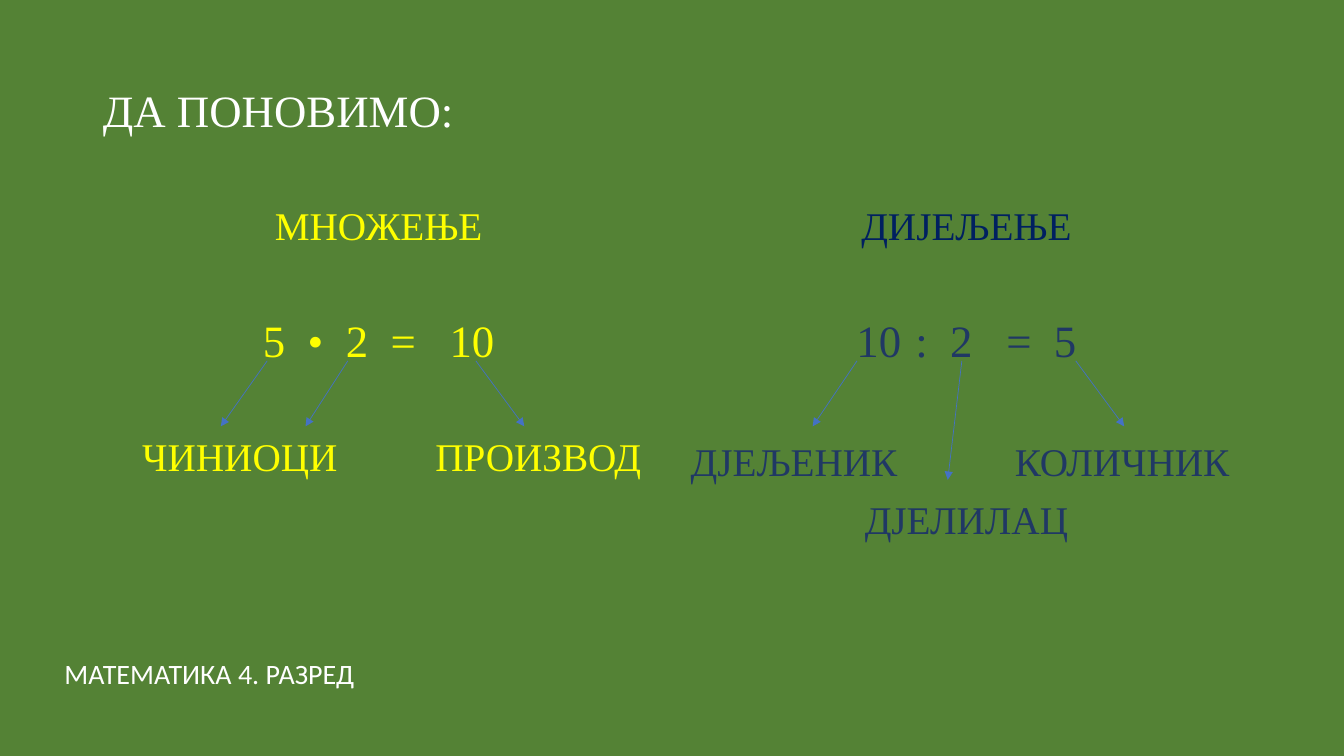
"""Build the revision slide on multiplication and division."""
from dataclasses import dataclass

from pptx import Presentation
from pptx import util as u
from pptx.dml import color
from pptx.enum import shapes, text
from pptx.oxml import ns
from lxml import etree


@dataclass(frozen=True)
class Theme:
    """Colours, fonts and type sizes of the slide."""
    board: str = "548235"
    white: str = "FFFFFF"
    yellow: str = "FFFF00"
    navy: str = "002060"
    ink: str = "203864"
    arrow: str = "4472C4"
    serif: str = "Times New Roman"
    sans: str = "Calibri"
    large: int = 32
    medium: int = 28
    small: int = 20


THEME = Theme()
LEFT, CENTER = text.PP_ALIGN.LEFT, text.PP_ALIGN.CENTER


def rgb(value):
    """Turn a hex string into a colour."""
    return color.RGBColor.from_string(value)


def place(shape, box):
    """Move a shape to a box given in inches."""
    shape.left, shape.top, shape.width, shape.height = map(u.Inches, box)


def write(paragraph, words, *, size, ink, font=THEME.serif, align=LEFT,
          before=0, spacing=0.9, indent=0, gaps=()):
    """Fill a paragraph with unbulleted text, widening its spaces by gaps in points."""
    properties = paragraph._p.get_or_add_pPr()
    properties.set("marL", str(u.Inches(indent)))
    properties.set("indent", "0")
    etree.SubElement(properties, ns.qn("a:buNone"))
    paragraph.alignment = align
    paragraph.line_spacing = spacing
    paragraph.space_before = u.Pt(before)
    parts = words.split(" ") if gaps else [words]
    pieces = [(parts[0], 0)]
    for gap, part in zip(gaps, parts[1:]):
        pieces += [(" ", gap), (part, 0)]
    for piece, gap in pieces:
        run = paragraph.add_run()
        run.text = piece
        run.font.name = font
        run.font.size = u.Pt(size)
        run.font.color.rgb = rgb(ink)
        if gap:
            run.font._element.set("spc", str(gap * 100))


def add_title(slide, box):
    """Place the slide title."""
    title = slide.shapes.title
    place(title, box)
    frame = title.text_frame
    frame.vertical_anchor = text.MSO_ANCHOR.MIDDLE
    frame.auto_size = text.MSO_AUTO_SIZE.NONE
    write(frame.paragraphs[0], "ДА ПОНОВИМО:", size=THEME.large, ink=THEME.white)


def add_arrow(slide, start, end):
    """Draw a thin arrow between two points in inches."""
    arrow = slide.shapes.add_connector(
        shapes.MSO_CONNECTOR.STRAIGHT, *map(u.Inches, (*start, *end)))
    arrow.line.color.rgb = rgb(THEME.arrow)
    arrow.line.width = u.Pt(0.5)
    etree.SubElement(arrow.line._get_or_add_ln(), ns.qn("a:tailEnd"), type="triangle")
    etree.SubElement(arrow._element.spPr, ns.qn("a:effectLst"))


def add_operation(slide, body, box, lines, arrows):
    """Fill one column with an operation and arrows to the names of its parts."""
    place(body, box)
    frame = body.text_frame
    frame.word_wrap = True
    frame.vertical_anchor = text.MSO_ANCHOR.TOP
    frame.auto_size = text.MSO_AUTO_SIZE.NONE
    for number, (words, look) in enumerate(lines):
        paragraph = frame.add_paragraph() if number else frame.paragraphs[0]
        write(paragraph, words, **look)
    left, top = box[:2]
    for start, end, drop in arrows:
        add_arrow(slide, (left + start, top + 1.58), (left + end, top + drop))


def add_subject(slide, box):
    """Place the subject and grade at the bottom."""
    subject = slide.shapes.add_textbox(*map(u.Inches, box))
    frame = subject.text_frame
    frame.word_wrap = True
    frame.auto_size = text.MSO_AUTO_SIZE.SHAPE_TO_FIT_TEXT
    write(frame.paragraphs[0], "МАТЕМАТИКА 4. РАЗРЕД", size=THEME.small,
          ink=THEME.white, font=THEME.sans, spacing=1.0)


def main():
    """Build and save the slide."""
    deck = Presentation()
    deck.slide_width, deck.slide_height = u.Inches(13.33), u.Inches(7.5)
    slide = deck.slides.add_slide(deck.slide_layouts[3])
    slide.background.fill.solid()
    slide.background.fill.fore_color.rgb = rgb(THEME.board)

    add_title(slide, (0.92, 0.4, 11.5, 1.45))
    yellow = dict(size=THEME.medium, ink=THEME.yellow)
    ink = dict(size=THEME.medium, ink=THEME.ink)
    expression = dict(size=THEME.large, align=CENTER, before=50)
    multiplication = [
        ("МНОЖЕЊЕ", dict(yellow, align=CENTER)),
        ("5 • 2 = 10", dict(expression, ink=THEME.yellow, gaps=(8, 8, 8, 16))),
        ("ЧИНИОЦИ ПРОИЗВОД", dict(yellow, before=50, indent=0.39, gaps=(63,))),
    ]
    division = [
        ("ДИЈЕЉЕЊЕ", dict(ink, ink=THEME.navy, align=CENTER)),
        ("10 : 2 = 5", dict(expression, ink=THEME.ink, gaps=(2, 8, 16, 8))),
        ("ДЈЕЉЕНИК КОЛИЧНИК", dict(ink, before=54, gaps=(77,))),
        ("ДЈЕЛИЛАЦ", dict(ink, before=11, align=CENTER)),
    ]
    add_operation(slide, slide.placeholders[1], (0.92, 2, 5.67, 4.76), multiplication,
                  [(1.73, 1.27, 2.23), (2.53, 2.11, 2.23), (3.8, 4.28, 2.23)])
    add_operation(slide, slide.placeholders[2], (6.75, 2, 5.67, 4.76), division,
                  [(1.75, 1.31, 2.23), (2.79, 2.65, 2.76), (3.92, 4.4, 2.23)])
    add_subject(slide, (0.54, 6.46, 4.67, 0.44))
    deck.save("out.pptx")


if __name__ == "__main__":
    main()
